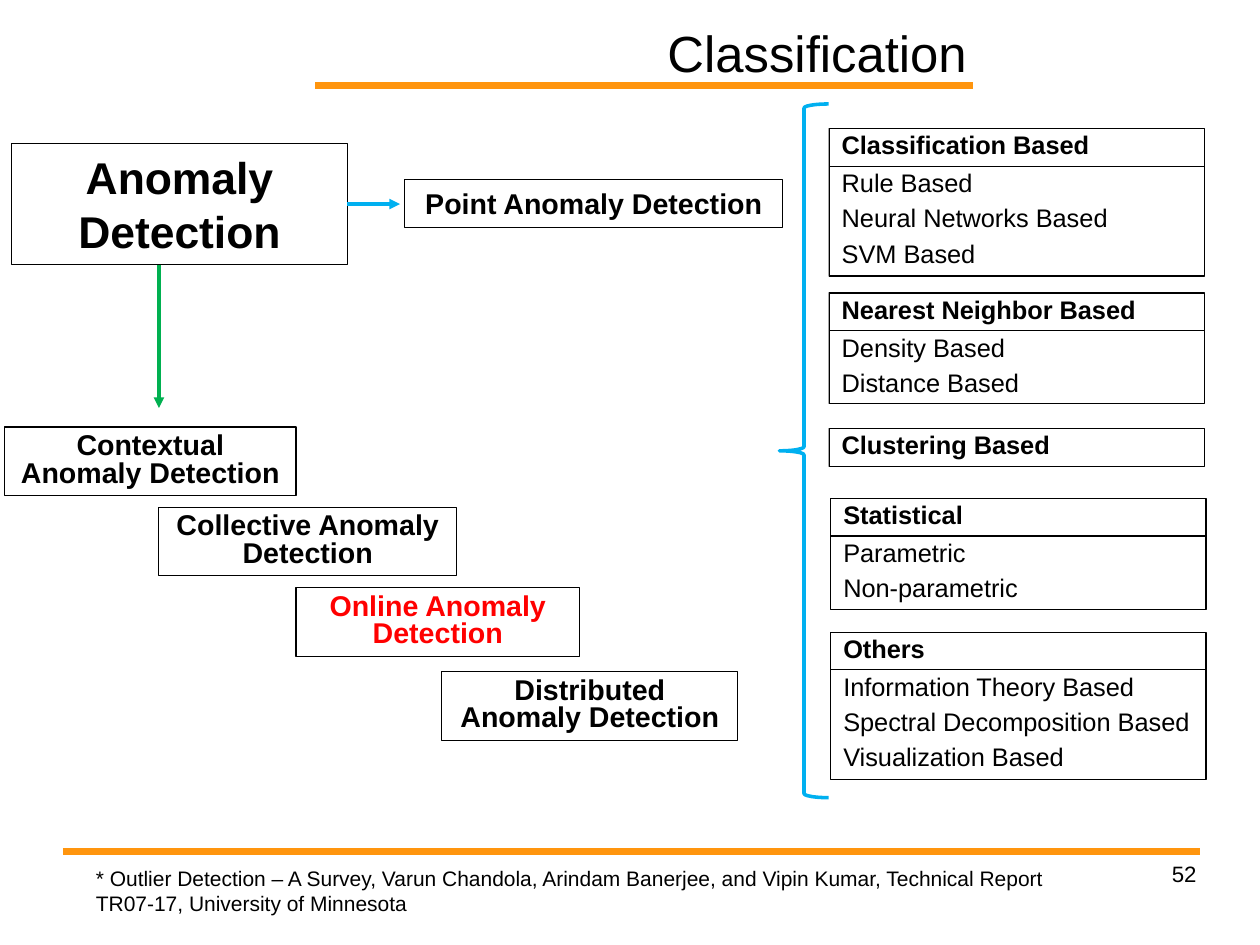
from dataclasses import dataclass

from lxml import etree
from pptx import Presentation
from pptx.dml.color import RGBColor
from pptx.enum import shapes, text
from pptx.oxml import ns
from pptx.util import Pt


@dataclass(frozen=True)
class Theme:
    font: str = "Arial"
    ink: str = "000000"
    paper: str = "FFFFFF"
    hot: str = "FF0000"
    bar: str = "FF950E"
    blue: str = "00B0F0"
    green: str = "00B050"
    title: float = 32
    root: float = 28
    kind: float = 18
    item: float = 16
    note: float = 13.2
    page: float = 14
    thin: float = 0.75
    bold: float = 2.25
    thick: float = 4.31


T = Theme()
ALIGN = text.PP_ALIGN
SHAPE = shapes.MSO_SHAPE
INSET = (8, 4.3)
HEAD = 23.76
ROW = 23.04
WIDE = 236.5

KINDS = [
    ("Contextual Anomaly Detection", (2.9, 269, 183.6, 43.2), T.ink),
    ("Collective Anomaly Detection", (99.9, 319.5, 187.9, 43.2), T.ink),
    ("Online Anomaly Detection", (186.5, 370.2, 178.6, 43.2), T.hot),
    ("Distributed Anomaly Detection", (278.3, 423.1, 186.5, 43.2), T.ink),
]
GROUPS = [
    ("Classification Based", 522.2, 81,
     ["Rule Based", "Neural Networks Based", "SVM Based"]),
    ("Nearest Neighbor Based", 522.2, 184.6,
     ["Density Based", "Distance Based"]),
    ("Clustering Based", 522.2, 270, []),
    ("Statistical", 523.2, 313.9, ["Parametric", "Non-parametric"]),
    ("Others", 523.2, 398.2,
     ["Information Theory Based", "Spectral Decomposition Based",
      "Visualization Based"]),
]


def tint(name):
    return RGBColor.from_string(name)


def place(shape, area):
    shape.left, shape.top, shape.width, shape.height = map(Pt, area)


def edge(shape, color=T.ink, width=T.thin):
    shape.line.color.rgb = tint(color)
    shape.line.width = Pt(width)


def write(shape, lines, size, color=T.ink, bold=False, align=ALIGN.LEFT,
          space=1.0, before=0, inset=INSET, anchor=text.MSO_ANCHOR.TOP):
    frame = shape.text_frame
    frame.word_wrap = True
    frame.auto_size = text.MSO_AUTO_SIZE.NONE
    frame.vertical_anchor = anchor
    frame.margin_left = frame.margin_right = Pt(inset[0])
    frame.margin_top = frame.margin_bottom = Pt(inset[1])
    for spot, line in enumerate(lines):
        para = frame.add_paragraph() if spot else frame.paragraphs[0]
        para.alignment = align
        para.line_spacing = space
        para.space_before = Pt(before if spot else 0)
        run = para.add_run()
        run.text = line
        run.font.name = T.font
        run.font.size = Pt(size)
        run.font.bold = bold
        run.font.color.rgb = tint(color)


def add_box(slide, label, area, size, **style):
    box = slide.shapes.add_shape(SHAPE.RECTANGLE, *map(Pt, area))
    box.shadow.inherit = False
    box.fill.background()
    edge(box)
    write(box, [label], size, bold=True, **style)
    return box


def add_list(holder, items, area):
    place(holder, area)
    edge(holder)
    write(holder, items, T.item, space=0.8, before=6.9)
    for para in holder.text_frame.paragraphs:
        props = para._p.get_or_add_pPr()
        props.set("marL", "0")
        props.set("indent", "0")
        props.insert_element_before(
            props.makeelement(ns.qn("a:buNone")), "a:tabLst", "a:defRPr")


def add_line(slide, start, end, color, width, arrow=False):
    line = slide.shapes.add_connector(
        shapes.MSO_CONNECTOR.STRAIGHT, *map(Pt, start + end))
    edge(line, color, width)
    props = line.element.spPr
    if arrow:
        etree.SubElement(props.find(ns.qn("a:ln")), ns.qn("a:tailEnd"),
                         type="triangle")
    etree.SubElement(props, ns.qn("a:effectLst"))
    return line


def add_note(slide, label, area, size, **style):
    note = slide.shapes.add_textbox(*map(Pt, area))
    write(note, [label], size, **style)


def add_brace(slide, area):
    brace = slide.shapes.add_shape(SHAPE.LEFT_BRACE, *map(Pt, area))
    brace.shadow.inherit = False
    brace.fill.solid()
    brace.fill.fore_color.rgb = tint(T.paper)
    edge(brace, T.blue, T.bold)


def add_groups(slide):
    holders = (h for h in slide.placeholders if h.placeholder_format.idx)
    for label, left, top, items in GROUPS:
        add_box(slide, label, (left, top, WIDE, HEAD), T.item, space=0.8)
        if items:
            area = (left, top + HEAD, WIDE, ROW * len(items))
            add_list(next(holders), items, area)


def main():
    deck = Presentation()
    deck.slide_width, deck.slide_height = Pt(793.7), Pt(595.28)
    slide = deck.slides.add_slide(deck.slide_layouts.get_by_name("Comparison"))

    add_line(slide, (198.7, 54), (612.7, 54), T.bar, T.thick)
    add_line(slide, (39.6, 536.4), (756, 536.4), T.bar, T.thick)
    title = slide.shapes.title
    place(title, (391, 2.2, 218.2, 61.9))
    write(title, ["Classification"], T.title, align=ALIGN.RIGHT,
          inset=(0, 0), anchor=text.MSO_ANCHOR.MIDDLE)

    root = add_box(slide, "Anomaly Detection", (7.2, 90.4, 211.7, 76.3),
                   T.root, align=ALIGN.CENTER)
    add_box(slide, "Point Anomaly Detection", (254.9, 113, 238.3, 30.2),
            T.kind, align=ALIGN.CENTER)
    for label, area, color in KINDS:
        add_box(slide, label, area, T.kind, color=color,
                align=ALIGN.CENTER, space=0.8)

    middle = 90.4 + 76.3 / 2
    link = add_line(slide, (218.9, middle), (252, middle),
                    T.blue, T.bold, True)
    link.begin_connect(root, 3)
    add_line(slide, (100.1, 166.7), (100.1, 257), T.green, T.bold, True)

    add_groups(slide)
    add_brace(slide, (491, 65.5, 31, 437))
    add_note(slide, "* Outlier Detection – A Survey, Varun Chandola, "
             "Arindam Banerjee, and Vipin Kumar, Technical Report TR07-17, "
             "University of Minnesota", (53.3, 541.4, 641.5, 39.6),
             T.note, inset=(7.2, 3.6))
    add_note(slide, "52", (568.8, 542.2, 185, 41), T.page,
             align=ALIGN.RIGHT, inset=(0, 0))
    deck.save("out.pptx")


if __name__ == "__main__":
    main()
